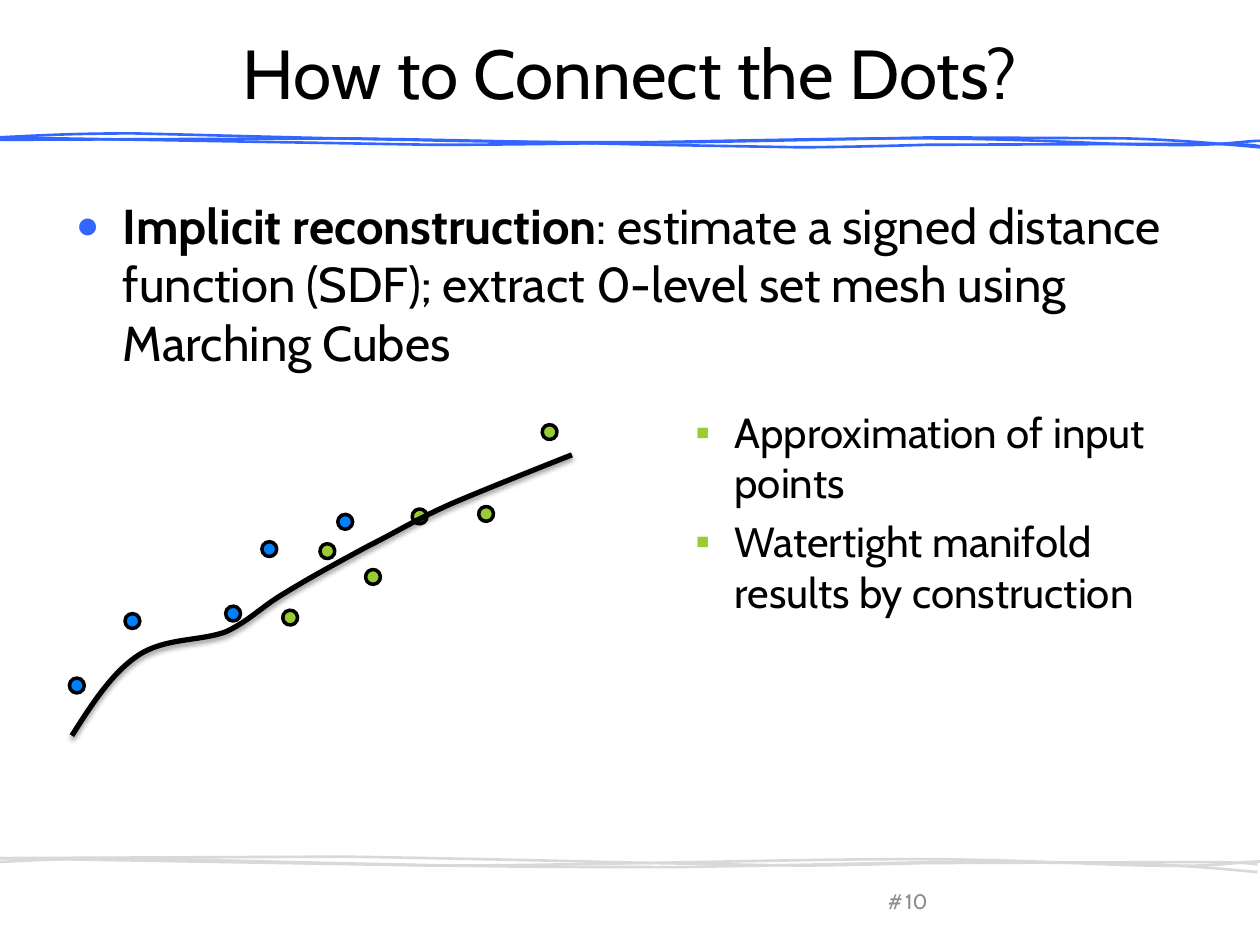
from dataclasses import dataclass

from lxml.etree import SubElement
from pptx import Presentation
from pptx.dml.color import RGBColor
from pptx.enum.shapes import MSO_SHAPE
from pptx.enum.text import MSO_ANCHOR, PP_ALIGN
from pptx.oxml.ns import qn
from pptx.util import Cm, Pt

COLORS = {
    "black": "000000",
    "rule": "3366FF",
    "footer_rule": "D9D9D9",
    "number": "8C8C8C",
    "blue_dot": "0080FF",
    "green": "99CC33",
}
FONT = "Cabin"
DOT_SIZE = 0.3

Point = tuple[float, float]


@dataclass
class Stroke:
    """Start point, then segments: one point for a line, three for a Bézier curve."""
    start: Point
    segments: list[tuple[Point, ...]]
    footer_shift: float = 0


@dataclass
class DotGroup:
    color: str
    rotation: float
    centers: list[Point]


@dataclass
class Bullet:
    character: str
    color: str
    text_indent: float
    hanging: float
    size_percent: int = 100


RULE_STROKES = [
    Stroke((-0.03, 2.77), [
        ((8.74, 2.92),),
        ((11.81, 2.92), (15.93, 2.79), (18.36, 2.79)),
        ((20.8, 2.79), (22.25, 2.92), (23.42, 2.92)),
        ((24.59, 2.95), (25.07, 2.84), (25.4, 2.84)),
        ((25.73, 2.82), (25.55, 2.84), (25.37, 2.84)),
    ], 14.53),
    Stroke((-0.03, 2.77), [
        ((0.66, 2.74), (1.32, 2.69), (2.69, 2.69)),
        ((4.09, 2.72), (6.4, 2.79), (8.26, 2.82)),
        ((10.08, 2.87), (12.04, 2.87), (13.79, 2.87)),
        ((15.54, 2.84), (18.8, 2.77), (18.8, 2.77)),
        ((22.66, 2.79),),
        ((23.75, 2.82), (24.59, 2.9), (25.4, 2.97)),
    ], 14.61),
    Stroke((-0.05, 2.82), [
        ((6.99, 2.79),),
        ((9.19, 2.82), (13.21, 2.92), (13.21, 2.92)),
        ((16.1, 2.97),),
        ((17.02, 2.97), (18.67, 2.92), (18.67, 2.92)),
        ((23.95, 2.9),),
        ((25.07, 2.9), (25.25, 2.92), (25.4, 2.95)),
    ], 14.48),
]

SURFACE = Stroke((1.45, 14.83), [
    ((1.85, 14.2), (2.26, 13.56), (2.79, 13.21)),
    ((3.33, 12.85), (4.06, 12.93), (4.57, 12.73)),
    ((5.05, 12.5), (5.28, 12.22), (5.77, 11.94)),
    ((6.22, 11.66), (6.88, 11.3), (7.44, 11.0)),
    ((8.0, 10.72), (8.41, 10.46), (9.09, 10.16)),
    ((9.78, 9.86), (11.53, 9.17), (11.53, 9.17)),
])

DOT_GROUPS = [
    DotGroup("blue_dot", 331.6, [(2.67, 12.52), (4.7, 12.37), (5.43, 11.07),
                                 (1.55, 13.82), (6.96, 10.52)]),
    DotGroup("green", 323.8, [(7.52, 11.63), (8.46, 10.41), (9.8, 10.36),
                              (5.85, 12.45), (11.08, 8.71), (6.6, 11.11)]),
]


def rgb(name: str) -> RGBColor:
    return RGBColor.from_string(COLORS[name])


def draw_stroke(slide, stroke: Stroke, color: str, width: float, dx: float = 0, dy: float = 0):
    points = [stroke.start, *(point for segment in stroke.segments for point in segment)]
    points = [(Cm(x + dx), Cm(y + dy)) for x, y in points]
    builder = slide.shapes.build_freeform(*points[0])
    builder.add_line_segments(points[1:], close=False)
    shape = builder.convert_to_shape()
    bend_segments(shape, stroke)
    shape.fill.background()
    shape.line.color.rgb = rgb(color)
    shape.line.width = Pt(width)
    shape.shadow.inherit = False
    return shape


def bend_segments(shape, stroke: Stroke) -> None:
    """Join each three line steps of a Bézier segment into one curve."""
    outline = next(shape._element.iter(qn("a:path")))
    steps = iter(outline.findall(qn("a:lnTo")))
    for segment in stroke.segments:
        lines = [next(steps) for _ in segment]
        if len(lines) == 3:
            curve = SubElement(outline, qn("a:cubicBezTo"))
            lines[0].addprevious(curve)
            for line in lines:
                curve.append(line[0])
                outline.remove(line)


def add_soft_shadow(shape) -> None:
    effects = shape._element.spPr.find(qn("a:effectLst"))
    shadow = SubElement(effects, qn("a:outerShdw"), blurRad=str(Pt(3.1)), dist=str(Pt(1.6)),
                        dir="5400000", rotWithShape="0")
    color = SubElement(shadow, qn("a:srgbClr"), val=COLORS["black"])
    SubElement(color, qn("a:alpha"), val="38000")


def draw_dot(slide, center: Point, group: DotGroup) -> None:
    left, top = (Cm(value - DOT_SIZE / 2) for value in center)
    shape = slide.shapes.add_shape(MSO_SHAPE.OVAL, left, top, Cm(DOT_SIZE), Cm(DOT_SIZE))
    shape.rotation = group.rotation
    shape.shadow.inherit = False
    shape.fill.solid()
    shape.fill.fore_color.rgb = rgb(group.color)
    shape.line.color.rgb = rgb("black")
    shape.line.width = Pt(2)


def add_bullet(paragraph, bullet: Bullet) -> None:
    properties = paragraph._p.get_or_add_pPr()
    properties.set("marL", str(Cm(bullet.text_indent)))
    properties.set("indent", str(-Cm(bullet.hanging)))
    color = SubElement(properties, qn("a:buClr"))
    SubElement(color, qn("a:srgbClr"), val=COLORS[bullet.color])
    SubElement(properties, qn("a:buSzPct"), val=str(bullet.size_percent * 1000))
    SubElement(properties, qn("a:buFont"), typeface="Arial")
    SubElement(properties, qn("a:buChar"), char=bullet.character)


def draw_text(slide, box: tuple[float, ...], paragraphs: list[list[str]], size: float,
              color: str = "black", bullet: Bullet | None = None, wrap: bool = True) -> list:
    """Each paragraph is a list of run texts; text without bullets is centred."""
    text_frame = slide.shapes.add_textbox(*map(Cm, box)).text_frame
    text_frame.word_wrap = wrap
    text_frame.vertical_anchor = MSO_ANCHOR.TOP if bullet else MSO_ANCHOR.MIDDLE
    for index, texts in enumerate(paragraphs):
        paragraph = text_frame.add_paragraph() if index else text_frame.paragraphs[0]
        if index:
            paragraph.space_before = Pt(size * 0.2)
        if bullet:
            add_bullet(paragraph, bullet)
        else:
            paragraph.alignment = PP_ALIGN.CENTER
        for text in texts:
            run = paragraph.add_run()
            run.text = text
            run.font.name = FONT
            run.font.size = Pt(size)
            run.font.color.rgb = rgb(color)
    return list(text_frame.paragraphs)


def main() -> None:
    presentation = Presentation()
    presentation.slide_width, presentation.slide_height = Cm(25.4), Cm(19.05)
    slide = presentation.slides.add_slide(presentation.slide_layouts[6])

    # Hand-drawn rules under the title and above the footer
    for stroke in RULE_STROKES:
        draw_stroke(slide, stroke, "rule", 1.5)
    for stroke in RULE_STROKES:
        draw_stroke(slide, stroke, "footer_rule", 1.5, -0.05, stroke.footer_shift)

    # Title and main statement
    draw_text(slide, (1.27, 0.78, 22.86, 1.35), [["How to Connect the Dots?"]], 39.6)
    statement = draw_text(
        slide, (1.27, 3.81, 22.86, 12.7),
        [["Implicit reconstruction", ": estimate a signed distance function (SDF); "
          "extract 0-level set mesh using Marching Cubes"]],
        28, bullet=Bullet("●", "rule", 0.96, 0.95, 80))
    statement[0].runs[0].font.bold = True

    # Sample points and the fitted surface
    for group in DOT_GROUPS:
        for center in group.centers:
            draw_dot(slide, center, group)
    add_soft_shadow(draw_stroke(slide, SURFACE, "black", 3))

    # Properties of the method
    draw_text(slide, (12.5, 8.07, 11.86, 5.49),
              [["Approximation of input points"], ["Watertight manifold results by construction"]],
              24, bullet=Bullet("▪", "green", 2.06, 0.79))

    # Slide number
    draw_text(slide, (17.65, 17.78, 0.76, 0.76), [["#"]], 12, "number", wrap=False)
    draw_text(slide, (17.65, 17.65, 1.65, 1.02), [["10"]], 12, "number")

    presentation.save("out.pptx")


if __name__ == "__main__":
    main()
